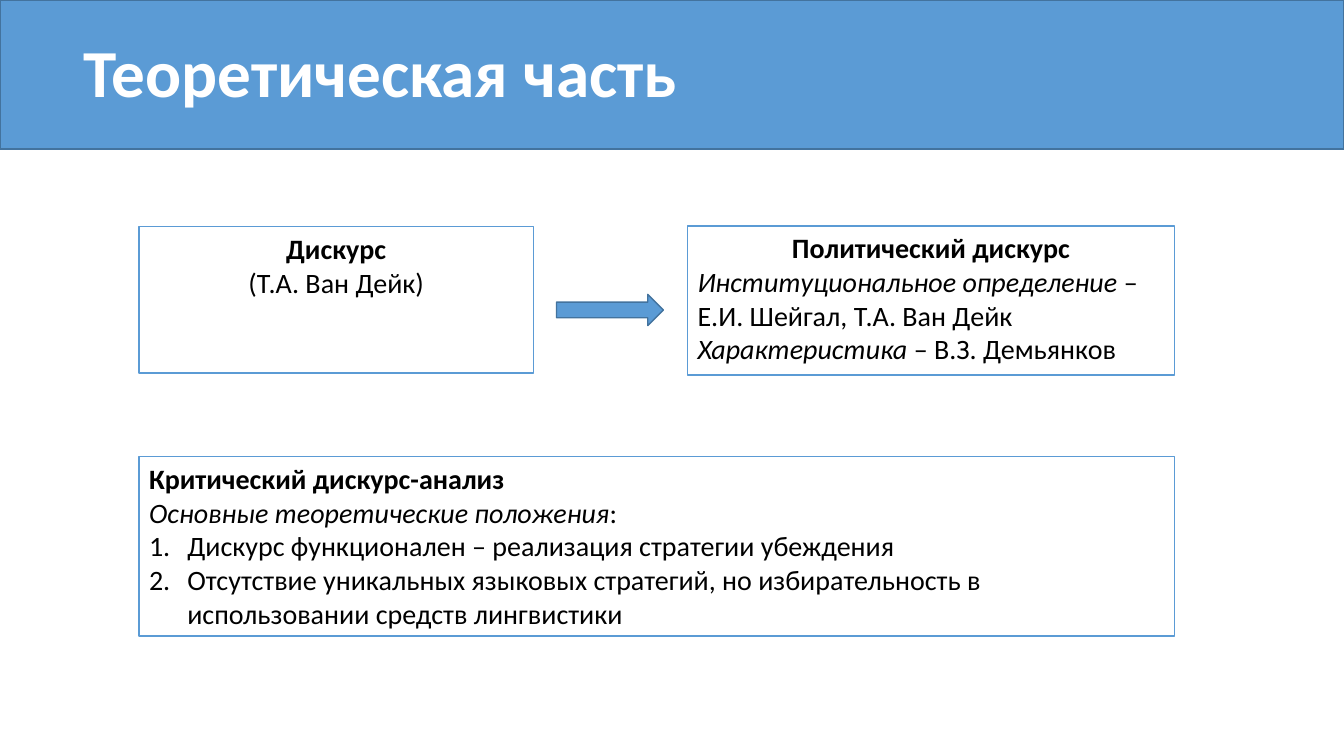
from pptx import Presentation
from pptx.dml.color import RGBColor
from pptx.enum.shapes import MSO_SHAPE as SHAPE
from pptx.enum.text import MSO_ANCHOR as ANCHOR, MSO_AUTO_SIZE as AUTO, PP_ALIGN as ALIGN
from pptx.oxml.ns import qn
from pptx.util import Inches, Pt

BLUE = RGBColor(0x5B, 0x9B, 0xD5)
DARK_BLUE = RGBColor(0x43, 0x73, 0x9E)
WHITE = RGBColor(0xFF, 0xFF, 0xFF)
BLACK = RGBColor(0, 0, 0)
FONT = "Calibri"

WIDTH, HEIGHT = 13.33, 7.5
LEFT, RIGHT = 1.38, 11.65

DISCOURSE = [
    ("center", [("Дискурс", "bold")]),
    ("center", [("(Т.А. Ван Дейк)", "plain")]),
]
POLITICAL = [
    ("center", [("Политический дискурс", "bold")]),
    ("left", [("Институциональное определение", "italic"),
              (" – Е.И. Шейгал, Т.А. Ван Дейк", "plain")]),
    ("left", [("Характеристика", "italic"), (" – В.З. Демьянков", "plain")]),
]
ANALYSIS = [
    ("left", [("Критический дискурс-анализ", "bold")]),
    ("left", [("Основные теоретические положения", "italic"), (":", "plain")]),
    ("number", [("Дискурс функционален – реализация стратегии убеждения", "plain")]),
    ("number", [("Отсутствие уникальных языковых стратегий, но избирательность "
                 "в использовании средств лингвистики", "plain")]),
]


def add_block(s, kind, box, fill, line):
    """Add a flat preset shape filling the box."""
    sp = s.shapes.add_shape(kind, *map(Inches, box))
    sp.shadow.inherit = False
    sp.fill.solid()
    sp.fill.fore_color.rgb = fill
    sp.line.color.rgb = line
    sp.line.width = Pt(1)
    return sp


def set_font(font, size, color):
    """Give a font the slide's typeface, a size and a colour."""
    font.name = FONT
    font.size = Pt(size)
    font.color.rgb = color


def number_paragraph(p):
    """Turn a paragraph into a numbered item with a hanging indent."""
    pPr = p._p.get_or_add_pPr()
    pPr.set("marL", str(Inches(0.38)))
    pPr.set("indent", str(-Inches(0.38)))
    bullet = pPr.makeelement(qn("a:buAutoNum"), {"type": "arabicPeriod"})
    pPr.insert(0, bullet)


def add_header(s, box):
    """Place the blue band and the title on top of it."""
    x, y, w, h = box
    band = add_block(s, SHAPE.RECTANGLE, box, BLUE, DARK_BLUE)
    title = s.shapes.title
    title._element.addprevious(band._element)
    title.left, title.top = Inches(x + 0.73), Inches(y + 0.03)
    title.width, title.height = Inches(11.5), Inches(h - 0.03)
    tf = title.text_frame
    tf.text = "Теоретическая часть"
    tf.auto_size = AUTO.NONE
    tf.vertical_anchor = ANCHOR.MIDDLE
    p = tf.paragraphs[0]
    p.alignment = ALIGN.LEFT
    p.line_spacing = 0.9
    set_font(p.font, 48, WHITE)
    p.font.bold = True


def add_text_panel(s, box, paragraphs):
    """Add an outlined white panel with styled paragraphs."""
    tf = add_block(s, SHAPE.RECTANGLE, box, WHITE, BLUE).text_frame
    tf.word_wrap = True
    tf.vertical_anchor = ANCHOR.TOP
    for i, (layout, runs) in enumerate(paragraphs):
        p = tf.add_paragraph() if i else tf.paragraphs[0]
        p.alignment = ALIGN.CENTER if layout == "center" else ALIGN.LEFT
        set_font(p.font, 20, BLACK)
        if layout == "number":
            number_paragraph(p)
        for text, style in runs:
            r = p.add_run()
            r.text = text
            r.font.bold = style == "bold"
            r.font.italic = style == "italic"


def add_discourse_row(s, box):
    """Place the general term, the arrow and the narrower term."""
    x, y, w, h = box
    political_w = 4.83
    add_text_panel(s, (x, y + 0.01, 3.91, h - 0.03), DISCOURSE)
    add_text_panel(s, (x + w - political_w, y, political_w, h), POLITICAL)
    add_block(s, SHAPE.RIGHT_ARROW, (x + 4.14, y + 0.68, 1.06, 0.31), BLUE, DARK_BLUE)


def main():
    """Build the slide and save it."""
    prs = Presentation()
    prs.slide_width, prs.slide_height = Inches(WIDTH), Inches(HEIGHT)
    s = prs.slides.add_slide(prs.slide_layouts[5])
    add_header(s, (0, 0, WIDTH, 1.48))
    add_discourse_row(s, (LEFT, 2.24, RIGHT - LEFT, 1.48))
    add_text_panel(s, (LEFT, 4.53, RIGHT - LEFT, 1.78), ANALYSIS)
    prs.save("out.pptx")


if __name__ == "__main__":
    main()
